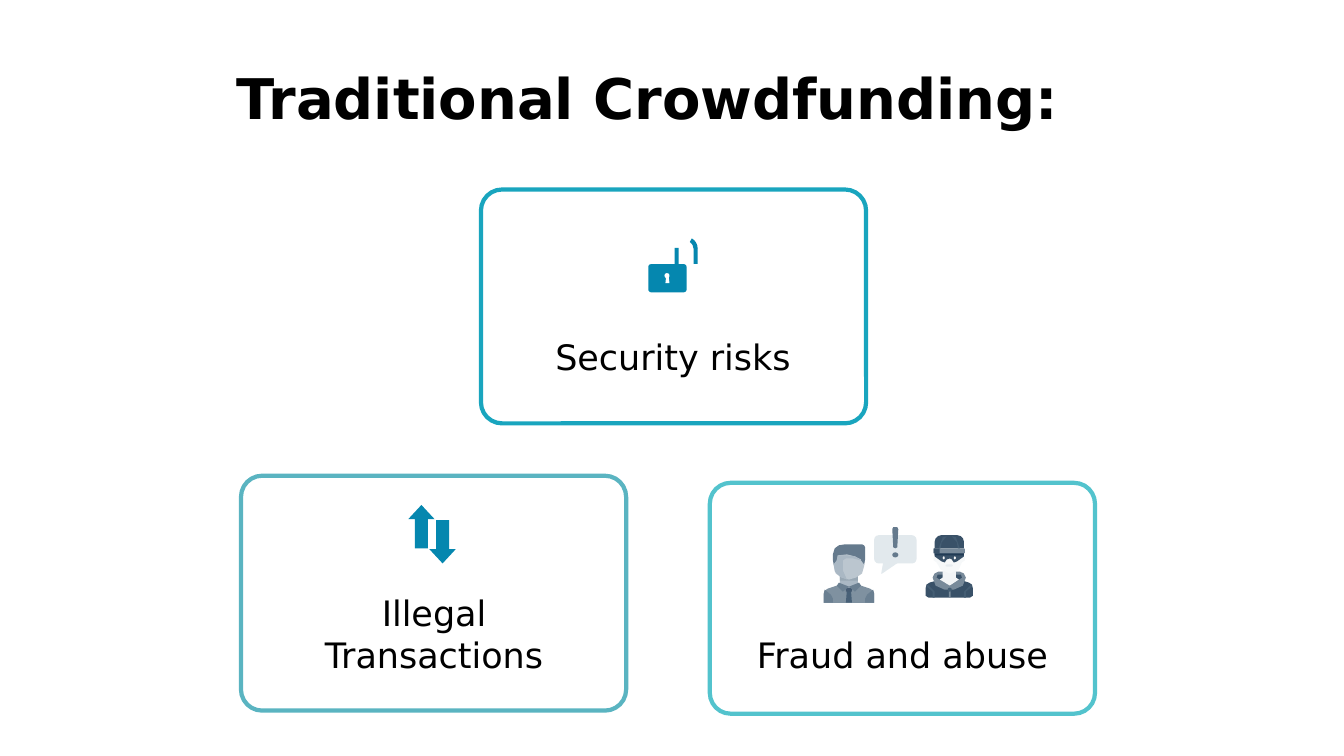
import pptx
import pptx.util
import pptx.dml.color
import pptx.enum.shapes
import pptx.enum.text

Inches = pptx.util.Inches
Pt = pptx.util.Pt
SHAPE = pptx.enum.shapes.MSO_SHAPE
TEXT = pptx.enum.text

FONT = "DejaVu Sans"
TITLE = ("Traditional Crowdfunding:", (0.09, 0.58, 12.66, 0.77))

# label, label box, card box, outline colour
CARDS = [
    ("Security risks", (5.21, 3.28, 2.93, 0.52), (4.77, 1.88, 3.82, 2.32), "19A5BE"),
    ("Illegal Transactions", (2.56, 5.82, 3.49, 0.94), (2.39, 4.72, 3.82, 2.33), "5AB4C1"),
    ("Fraud and abuse", (7.13, 6.24, 3.64, 0.52), (7.04, 4.79, 3.82, 2.29), "53C3CD"),
]

BLUE, WHITE = "0587AF", "FFFFFF"
SLATE, STEEL, NAVY, GREY = "657A8D", "6A7F91", "395168", "788A9A"

# Preset part: colour, shape, box, adjustments.  Outline part: colour, points.
TRANSFER = [
    (BLUE, SHAPE.DOWN_ARROW, (4.26, 5.16, 0.26, 0.43), (0.5, 0.54)),
    (BLUE, SHAPE.UP_ARROW, (4.05, 5.01, 0.26, 0.43), (0.5, 0.54)),
]
PADLOCK = [
    (BLUE, SHAPE.BLOCK_ARC, (6.69, 2.35, 0.23, 0.23), (180, 0, 0.18)),
    (BLUE, SHAPE.RECTANGLE, (6.69, 2.46, 0.04, 0.17), ()),
    (BLUE, SHAPE.RECTANGLE, (6.88, 2.46, 0.04, 0.16), ()),
    (BLUE, SHAPE.ROUNDED_RECTANGLE, (6.43, 2.62, 0.38, 0.28), (0.1,)),
    (WHITE, SHAPE.OVAL, (6.59, 2.71, 0.05, 0.05), ()),
    (WHITE, SHAPE.TRAPEZOID, (6.6, 2.74, 0.04, 0.07), (0.2,)),
]
WARNING = [
    ("E2E9ED", SHAPE.ROUNDED_RECTANGLE, (8.67, 5.31, 0.42, 0.28), (0.16,)),
    ("E2E9ED", [(8.76, 5.58), (8.91, 5.58), (8.75, 5.69), (8.74, 5.69)]),
    (SLATE, [(8.86, 5.23), (8.9, 5.23), (8.91, 5.25), (8.9, 5.43),
             (8.88, 5.44), (8.86, 5.43), (8.85, 5.25)]),
    (SLATE, SHAPE.OVAL, (8.85, 5.48, 0.06, 0.05), ()),
]
VICTIM = [
    ("7F91A0", [(8.33, 5.8), (8.42, 5.82), (8.51, 5.8), (8.63, 5.84), (8.66, 5.86),
                (8.67, 5.89), (8.67, 5.98), (8.17, 5.98), (8.17, 5.89), (8.18, 5.86),
                (8.21, 5.84)]),
    ("476077", [(8.4, 5.85), (8.44, 5.85), (8.45, 5.98), (8.39, 5.98)]),
    ("465C73", SHAPE.RECTANGLE, (8.39, 5.82, 0.06, 0.05), ()),
    (STEEL, [(8.66, 5.85), (8.67, 5.89), (8.67, 5.98), (8.58, 5.98), (8.58, 5.94), (8.6, 5.9)]),
    (STEEL, [(8.18, 5.85), (8.17, 5.89), (8.17, 5.98), (8.26, 5.98), (8.26, 5.94), (8.24, 5.9)]),
    (SLATE, [(8.38, 5.4), (8.55, 5.4), (8.57, 5.41), (8.58, 5.43), (8.58, 5.55),
             (8.57, 5.61), (8.27, 5.61), (8.26, 5.55), (8.26, 5.5), (8.28, 5.44), (8.32, 5.41)]),
    ("AAB8C4", SHAPE.RECTANGLE, (8.33, 5.71, 0.18, 0.12), ()),
    ("99A8B4", SHAPE.RECTANGLE, (8.33, 5.71, 0.18, 0.05), ()),
    (STEEL, [(8.32, 5.78), (8.42, 5.82), (8.36, 5.87), (8.3, 5.81)]),
    (STEEL, [(8.52, 5.78), (8.42, 5.82), (8.48, 5.87), (8.54, 5.81)]),
    ("BBC6CF", [(8.31, 5.51), (8.4, 5.5), (8.48, 5.52), (8.54, 5.55), (8.54, 5.56),
                (8.57, 5.6), (8.57, 5.62), (8.55, 5.69), (8.49, 5.73), (8.42, 5.75),
                (8.35, 5.73), (8.29, 5.69), (8.27, 5.62), (8.27, 5.6), (8.3, 5.56)]),
    ("AAB8C4", [(8.31, 5.51), (8.4, 5.51), (8.48, 5.52), (8.54, 5.56), (8.46, 5.54),
                (8.39, 5.54), (8.36, 5.56), (8.36, 5.66), (8.4, 5.75), (8.33, 5.72),
                (8.28, 5.67), (8.27, 5.6), (8.3, 5.56)]),
]
MASKED_THIEF = [
    (NAVY, [(9.35, 5.73), (9.48, 5.73), (9.51, 5.75), (9.61, 5.78), (9.64, 5.8),
            (9.65, 5.84), (9.65, 5.91), (9.62, 5.93), (9.21, 5.93), (9.18, 5.91),
            (9.18, 5.84), (9.19, 5.8), (9.22, 5.78), (9.33, 5.75)]),
    (GREY, SHAPE.RECTANGLE, (9.41, 5.84, 0.02, 0.09), ()),
    (GREY, [(9.31, 5.67), (9.52, 5.67), (9.56, 5.69), (9.58, 5.73), (9.55, 5.81),
            (9.46, 5.85), (9.37, 5.85), (9.28, 5.81), (9.25, 5.73), (9.27, 5.69)]),
    (NAVY, [(9.3, 5.7), (9.53, 5.7), (9.54, 5.73), (9.42, 5.81), (9.29, 5.73)]),
    ("F2F4F6", [(9.35, 5.66), (9.48, 5.66), (9.48, 5.73), (9.51, 5.75), (9.42, 5.81),
                (9.32, 5.75), (9.35, 5.73)]),
    ("F6F8F9", [(9.29, 5.49), (9.54, 5.49), (9.54, 5.52), (9.57, 5.53), (9.57, 5.56),
                (9.54, 5.58), (9.51, 5.65), (9.42, 5.69), (9.33, 5.65), (9.29, 5.58),
                (9.26, 5.56), (9.26, 5.53), (9.29, 5.52)]),
    ("E7ECF0", SHAPE.ROUNDED_RECTANGLE, (9.38, 5.6, 0.07, 0.02), (0.5,)),
    (NAVY, SHAPE.ROUND_2_SAME_RECTANGLE, (9.27, 5.31, 0.29, 0.13), (0.5, 0)),
    ("445D73", SHAPE.OVAL, (9.4, 5.83, 0.04, 0.04), ()),
    ("445D73", [(9.2, 5.8), (9.27, 5.87), (9.27, 5.93), (9.25, 5.93), (9.25, 5.87), (9.19, 5.82)]),
    ("445D73", [(9.63, 5.8), (9.56, 5.87), (9.56, 5.93), (9.58, 5.93), (9.58, 5.87), (9.64, 5.82)]),
    (GREY, SHAPE.ROUNDED_RECTANGLE, (9.26, 5.44, 0.31, 0.05), (0.2,)),
    ("445D73", [(9.35, 5.33), (9.39, 5.32), (9.34, 5.38), (9.33, 5.44), (9.31, 5.44)]),
    ("445D73", [(9.48, 5.33), (9.44, 5.32), (9.49, 5.38), (9.5, 5.44), (9.52, 5.44)]),
    (NAVY, SHAPE.RECTANGLE, (9.26, 5.44, 0.06, 0.05), ()),
    (NAVY, [(9.27, 5.49), (9.56, 5.49), (9.56, 5.52), (9.49, 5.57), (9.46, 5.58),
            (9.44, 5.55), (9.42, 5.54), (9.39, 5.55), (9.37, 5.58), (9.34, 5.57), (9.27, 5.52)]),
    ("F6F8F9", SHAPE.OVAL, (9.35, 5.52, 0.02, 0.03), ()),
    ("F6F8F9", SHAPE.OVAL, (9.46, 5.52, 0.02, 0.03), ()),
    ("213B55", SHAPE.RECTANGLE, (9.27, 5.49, 0.29, 0.02), ()),
]


def rgb(value):
    return pptx.dml.color.RGBColor.from_string(value)


def inches(numbers):
    return [Inches(number) for number in numbers]


def write(holder, words, size, bold=False):
    frame = holder.text_frame
    frame.word_wrap = True
    frame.auto_size = TEXT.MSO_AUTO_SIZE.SHAPE_TO_FIT_TEXT
    line = frame.paragraphs[0]
    line.text = words
    line.alignment = TEXT.PP_ALIGN.CENTER
    line.font.name = FONT
    line.font.size = Pt(size)
    line.font.bold = bold
    line.font.color.rgb = rgb("000000")


def draw_icon(slide, parts):
    icon = slide.shapes.add_group_shape().shapes
    for colour, *geometry in parts:
        if len(geometry) == 1:
            start, *rest = [inches(point) for point in geometry[0]]
            outline = icon.build_freeform(*start)
            outline.add_line_segments(rest, close=True)
            part = outline.convert_to_shape()
        else:
            preset, box, adjustments = geometry
            part = icon.add_shape(preset, *inches(box))
            for index, value in enumerate(adjustments):
                part.adjustments[index] = value
        part.shadow.inherit = False
        part.fill.solid()
        part.fill.fore_color.rgb = rgb(colour)
        part.line.fill.background()


def draw_card(slide, label, label_box, card_box, colour):
    card = slide.shapes.add_shape(SHAPE.ROUNDED_RECTANGLE, *inches(card_box))
    card.adjustments[0] = 0.09
    card.shadow.inherit = False
    card.fill.background()
    card.line.color.rgb = rgb(colour)
    card.line.width = Pt(3)
    write(slide.shapes.add_textbox(*inches(label_box)), label, 25)


def main():
    deck = pptx.Presentation()
    deck.slide_width, deck.slide_height = inches((13.33, 7.5))
    slide = deck.slides.add_slide(deck.slide_layouts[5])
    words, title_box = TITLE
    title = slide.shapes.title
    title.left, title.top, title.width, title.height = inches(title_box)
    write(title, words, 40, bold=True)
    for card in CARDS:
        draw_card(slide, *card)
    for parts in (TRANSFER, PADLOCK, WARNING, VICTIM, MASKED_THIEF):
        draw_icon(slide, parts)
    deck.save("out.pptx")


if __name__ == "__main__":
    main()
